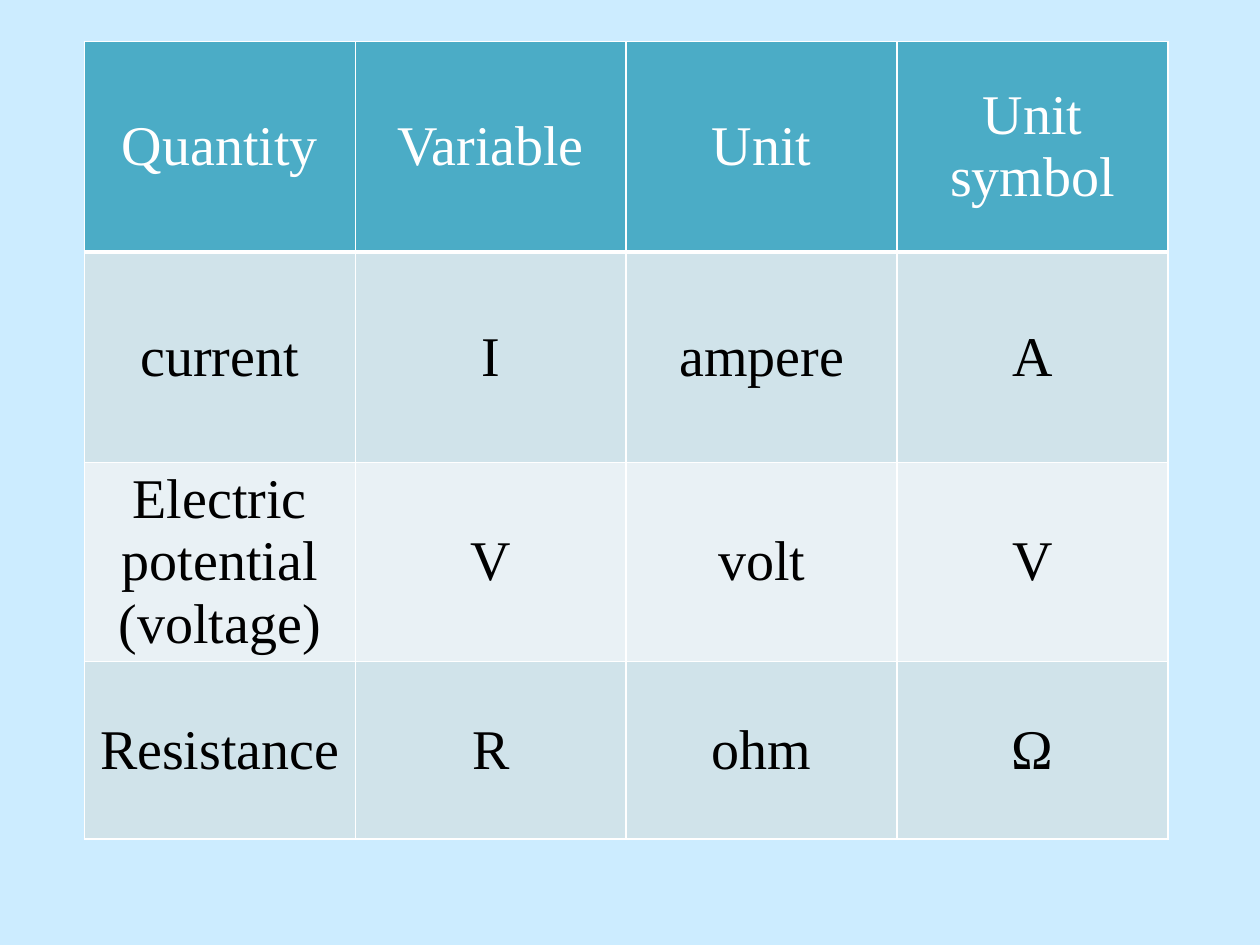
import dataclasses
import typing

import lxml.etree
import pptx
import pptx.dml.color
import pptx.enum.text
import pptx.oxml.ns
import pptx.util

Inches = pptx.util.Inches
Rgb = pptx.dml.color.RGBColor


@dataclasses.dataclass(frozen=True)
class Theme:
    back: str = "CCECFF"
    head: str = "4BACC6"
    odd: str = "D0E3EA"
    even: str = "E9F1F5"
    light: str = "FFFFFF"
    dark: str = "000000"
    font: str = "Times New Roman"
    size: int = 32
    thin: int = 1
    thick: int = 3


@dataclasses.dataclass(frozen=True)
class Row:
    texts: typing.Tuple[str, ...]
    high: float
    fill: str
    ink: str
    base: int


THEME = Theme()
LEFT, TOP, WIDE = 0.67, 0.33, 2.15
ROWS = (
    Row(("Quantity", "Variable", "Unit", "Unit symbol"),
        1.67, THEME.head, THEME.light, THEME.thick),
    Row(("current", "I", "ampere", "A"),
        1.67, THEME.odd, THEME.dark, THEME.thin),
    Row(("Electric potential\n(voltage)", "V", "volt", "V"),
        1.41, THEME.even, THEME.dark, THEME.thin),
    Row(("Resistance", "R", "ohm", "Ω"),
        1.41, THEME.odd, THEME.dark, THEME.thin),
)


def set_all(item: typing.Any, values: typing.Dict[str, typing.Any]) -> None:
    for name, value in values.items():
        setattr(item, name, value)


def add_edge(cell: typing.Any, side: str, width: int, spot: int) -> None:
    qn = pptx.oxml.ns.qn
    edge = lxml.etree.Element(qn(f"a:{side}"), w=str(pptx.util.Pt(width)))
    fill = lxml.etree.SubElement(edge, qn("a:solidFill"))
    lxml.etree.SubElement(fill, qn("a:srgbClr"), val=THEME.light)
    cell._tc.get_or_add_tcPr().insert(spot, edge)


def fill_cell(cell: typing.Any, text: str, row: Row) -> None:
    cell.text = text
    cell.vertical_anchor = pptx.enum.text.MSO_ANCHOR.MIDDLE
    cell.fill.solid()
    cell.fill.fore_color.rgb = Rgb.from_string(row.fill)
    style = {"name": THEME.font, "size": pptx.util.Pt(THEME.size), "bold": False}
    for para in cell.text_frame.paragraphs:
        para.alignment = pptx.enum.text.PP_ALIGN.CENTER
        for run in para.runs:
            set_all(run.font, style)
            run.font.color.rgb = Rgb.from_string(row.ink)
    edges = {"lnL": THEME.thin, "lnR": THEME.thin, "lnT": THEME.thin, "lnB": row.base}
    for spot, (side, width) in enumerate(edges.items()):
        add_edge(cell, side, width, spot)


def add_grid(slide: typing.Any, rows: typing.Tuple[Row, ...]) -> None:
    count = len(rows[0].texts)
    table = slide.shapes.add_table(
        len(rows), count, Inches(LEFT), Inches(TOP),
        Inches(WIDE * count), Inches(sum(row.high for row in rows))).table
    for col in table.columns:
        col.width = Inches(WIDE)
    for line, row in enumerate(rows):
        table.rows[line].height = Inches(row.high)
        for col, text in enumerate(row.texts):
            fill_cell(table.cell(line, col), text, row)


def main() -> None:
    deck = pptx.Presentation()
    set_all(deck, {"slide_width": Inches(10), "slide_height": Inches(7.5)})
    slide = deck.slides.add_slide(deck.slide_layouts[6])
    slide.background.fill.solid()
    slide.background.fill.fore_color.rgb = Rgb.from_string(THEME.back)
    add_grid(slide, ROWS)
    deck.save("out.pptx")


if __name__ == "__main__":
    main()
